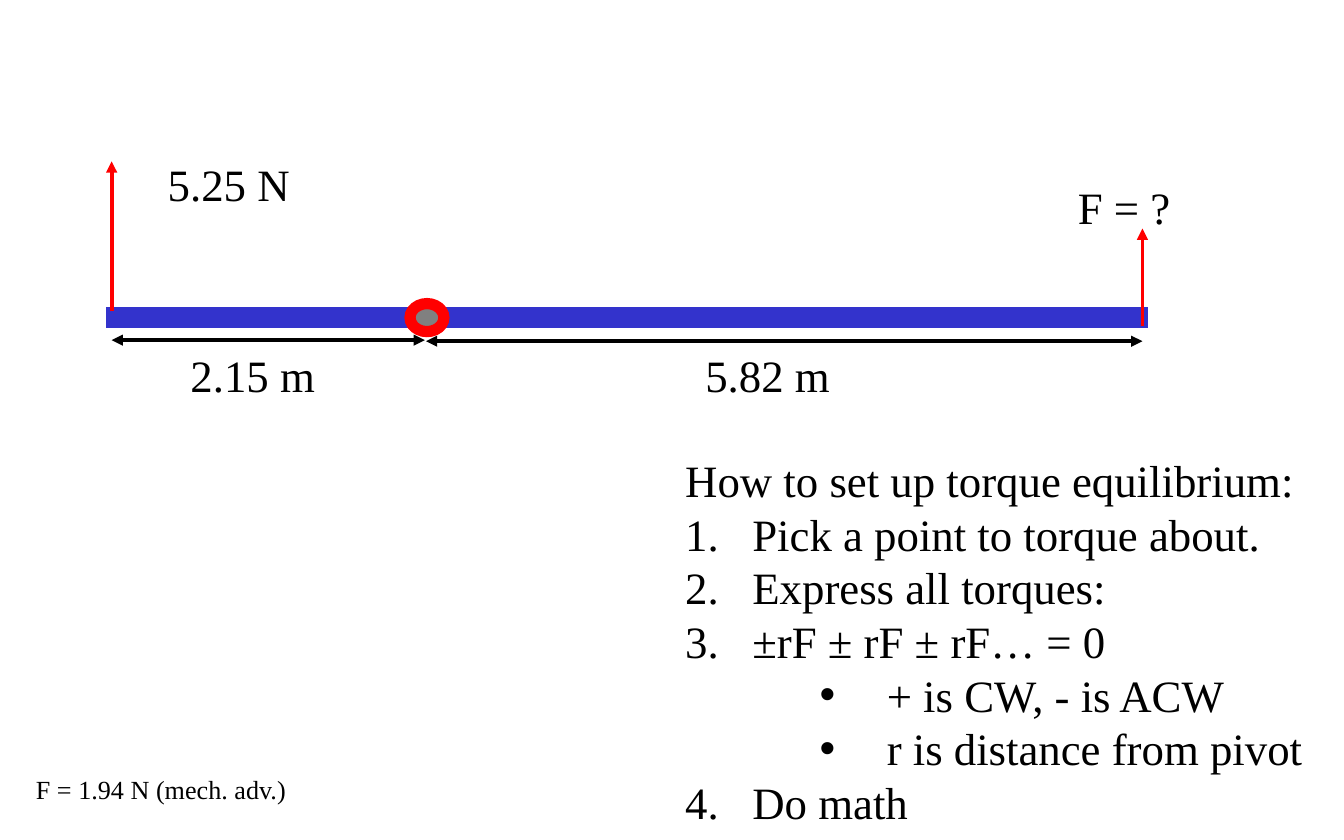
from lxml.etree import SubElement
from pptx import Presentation
from pptx.dml.color import RGBColor
from pptx.enum.shapes import MSO_CONNECTOR, MSO_SHAPE
from pptx.enum.text import MSO_AUTO_SIZE
from pptx.oxml.ns import qn
from pptx.util import Cm, Pt

BLACK = RGBColor(0x00, 0x00, 0x00)
GRAY = RGBColor(0x80, 0x80, 0x80)
BLUE = RGBColor(0x33, 0x33, 0xCC)
RED = RGBColor(0xFF, 0x00, 0x00)

LEFT_END, RIGHT_END = 2.11, 21.59
INDENT = 1.27
STEPS = [
    ("How to set up torque equilibrium:", None),
    ("Pick a point to torque about.", "number"),
    ("Express all torques:", "number"),
    ("±rF ± rF ± rF… = 0", "number"),
    ("+ is CW, - is ACW", "bullet"),
    ("r is distance from pivot", "bullet"),
    ("Do math", "number"),
]


class TorqueSlide:
    """Draws lever diagram elements on one slide in a shared style."""

    def __init__(self, page, font_name="Times New Roman"):
        self.page = page
        self.font_name = font_name

    def solid(self, kind, left, top, width, height, outline):
        shape = self.page.shapes.add_shape(kind, Cm(left), Cm(top), Cm(width), Cm(height))
        shape.shadow.inherit = False
        shape.fill.solid()
        shape.fill.fore_color.rgb = GRAY
        shape.line.color.rgb = outline
        shape.line.width = Pt(6)
        SubElement(shape.line._get_or_add_ln(), qn("a:miter"), lim="800000")

    def arrow(self, start, end, color, ends=("tailEnd",)):
        points = [Cm(value) for value in (*start, *end)]
        connector = self.page.shapes.add_connector(MSO_CONNECTOR.STRAIGHT, *points)
        connector.line.color.rgb = color
        connector.line.width = Pt(2)
        for end_name in ends:
            SubElement(connector.line._get_or_add_ln(), qn(f"a:{end_name}"), type="triangle")
        SubElement(connector._element.spPr, qn("a:effectLst"))

    def text_box(self, left, top, width, height, wrap=False):
        box = self.page.shapes.add_textbox(Cm(left), Cm(top), Cm(width), Cm(height))
        box.text_frame.word_wrap = wrap
        box.text_frame.auto_size = MSO_AUTO_SIZE.SHAPE_TO_FIT_TEXT
        return box.text_frame

    def format_runs(self, para, size):
        for span in para.runs:
            span.font.name = self.font_name
            span.font.size = Pt(size)
            span.font.color.rgb = BLACK

    def label(self, text, left, top, width, height=1.27, size=24):
        frame = self.text_box(left, top, width, height)
        frame.text = text
        self.format_runs(frame.paragraphs[0], size)

    def steps(self, items, left, top, width, height):
        frame = self.text_box(left, top, width, height, wrap=True)
        for index, (text, marker) in enumerate(items):
            para = frame.add_paragraph() if index else frame.paragraphs[0]
            para.text = text
            para.level = 2 if marker == "bullet" else 0
            properties = para._p.get_or_add_pPr()
            properties.set("marL", str(Cm(INDENT * (para.level + 1))))
            properties.set("indent", str(-Cm(INDENT)))
            if marker == "number":
                SubElement(properties, qn("a:buFont"), typeface=self.font_name)
                SubElement(properties, qn("a:buAutoNum"), type="arabicPeriod")
            elif marker == "bullet":
                SubElement(properties, qn("a:buFont"), typeface="Arial")
                SubElement(properties, qn("a:buChar"), char="•")
            else:
                SubElement(properties, qn("a:buNone"))
            self.format_runs(para, 24)


def main():
    deck = Presentation()
    deck.slide_width, deck.slide_height = Cm(25.4), Cm(15.88)
    diagram = TorqueSlide(deck.slides.add_slide(deck.slide_layouts[6]))

    diagram.solid(MSO_SHAPE.RECTANGLE, LEFT_END, 5.92, RIGHT_END - LEFT_END, 0.18, BLUE)
    diagram.solid(MSO_SHAPE.OVAL, 7.75, 5.74, 0.64, 0.53, RED)

    diagram.arrow((LEFT_END, 5.87), (LEFT_END, 3.05), RED)
    diagram.label("5.25 N", 2.92, 2.84, 2.84)
    diagram.arrow((RIGHT_END, 6.17), (RIGHT_END, 4.32), RED)
    diagram.label("F = ?", 20.12, 3.28, 2.29)

    both_ends = ("headEnd", "tailEnd")
    diagram.arrow((LEFT_END, 6.43), (8.03, 6.43), BLACK, both_ends)
    diagram.label("2.15 m", 3.35, 6.45, 2.9)
    diagram.arrow((8.05, 6.45), (RIGHT_END, 6.45), BLACK, both_ends)
    diagram.label("5.82 m", 13.08, 6.45, 2.9)

    diagram.label("F = 1.94 N (mech. adv.)", 0.43, 14.5, 5.28, 0.86, size=14)
    diagram.steps(STEPS, 12.7, 8.43, 12.7, 7.44)
    deck.save("out.pptx")


if __name__ == "__main__":
    main()
